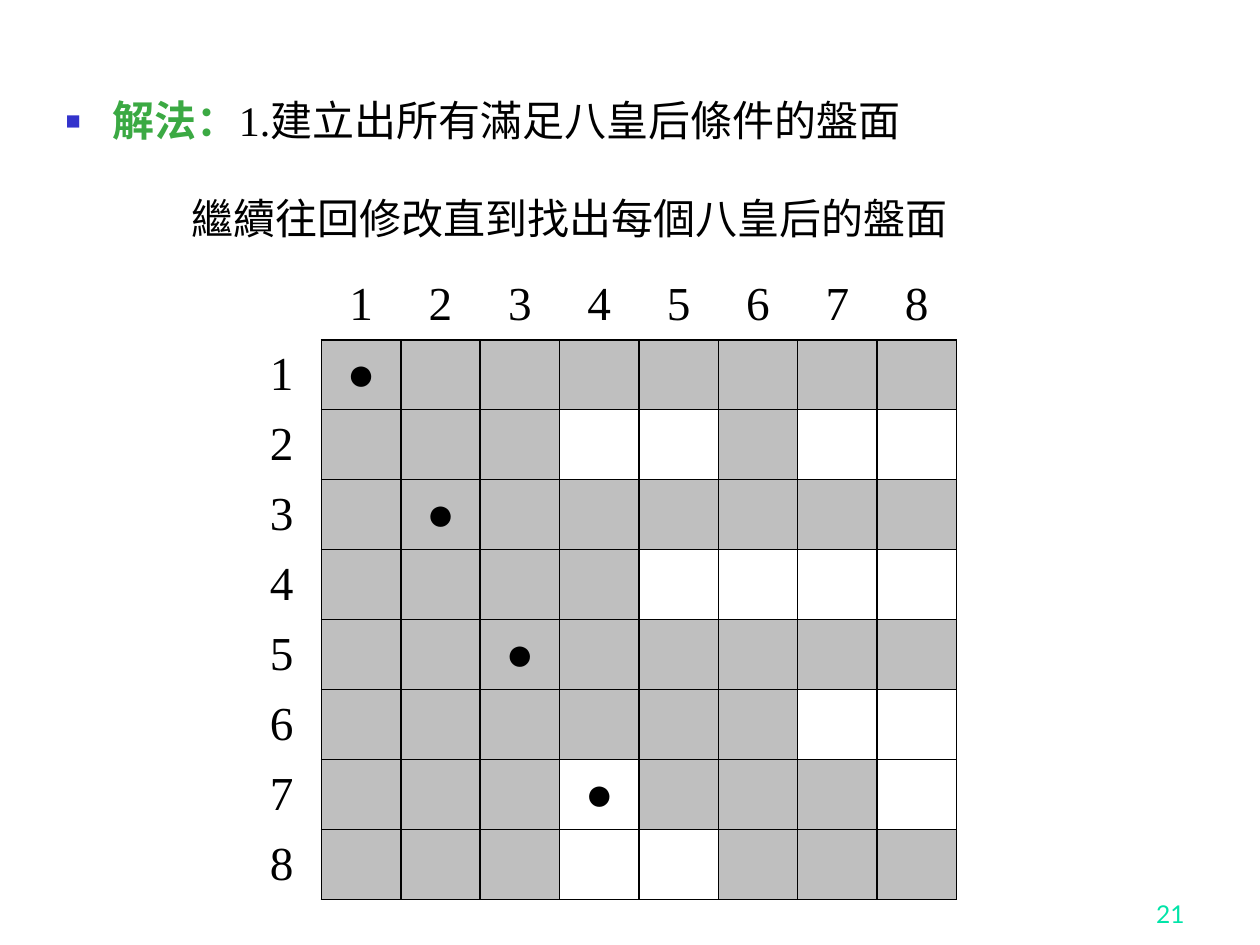
from lxml import etree
from pptx import Presentation
from pptx import util as u
from pptx.dml.color import RGBColor
from pptx.enum import text
from pptx.oxml import ns

# Content: "#" is an attacked square, "." a free one
LEAD = "解法："
STEP = "1.建立出所有滿足八皇后條件的盤面"
NOTE = "繼續往回修改直到找出每個八皇后的盤面"
PAGE = "21"
BOARD = [
    "########",
    "###..#..",
    "########",
    "####....",
    "########",
    "######..",
    "###.###.",
    "###..###",
]
QUEENS = [(1, 1), (3, 2), (5, 3), (7, 4)]  # row, column
SIZE = len(BOARD) + 1
COL, ROW = 1.6, 1.41  # cm
BLACK, WHITE, GREY = "000000", "FFFFFF", "BFBFBF"
SERIF = "Times New Roman"


def color(code):
    return RGBColor.from_string(code)


def box(shape, left, top, width, height):
    shape.left, shape.top = u.Cm(left), u.Cm(top)
    shape.width, shape.height = u.Cm(width), u.Cm(height)


def add_run(para, words, size, code=BLACK, face=SERIF, bold=False):
    run = para.add_run()
    run.text = words
    font = run.font
    font.size, font.name, font.bold = u.Pt(size), face, bold
    font.color.rgb = color(code)


def add_xml(parent, tag, **attrs):
    return etree.SubElement(parent, ns.qn("a:" + tag), attrs)


def indent(para, left, first):
    props = para._p.get_or_add_pPr()
    props.set("marL", str(u.Cm(left)))
    props.set("indent", str(u.Cm(first)))
    return props


def border(cell, sides):
    """Draw the sides marked true and clear the others."""
    props = cell._tc.get_or_add_tcPr()
    for spot, (side, drawn) in enumerate(sides.items()):
        line = etree.Element(ns.qn("a:ln" + side), w=str(u.Pt(1)))
        if drawn:
            add_xml(add_xml(line, "solidFill"), "srgbClr", val=BLACK)
        else:
            add_xml(line, "noFill")
        props.insert(spot, line)


def label(row, col):
    if (row, col) in QUEENS:
        return "●"
    if (row == 0) != (col == 0):
        return str(row + col)
    return ""


def add_body(slide):
    body = slide.placeholders[1]
    box(body, 1.07, 1.9, 22.43, 1.83)
    frame = body.text_frame
    frame.auto_size = text.MSO_AUTO_SIZE.NONE
    frame.vertical_anchor = text.MSO_ANCHOR.TOP

    # Bulleted line
    head = frame.paragraphs[0]
    head.line_spacing, head.space_before = 0.9, u.Pt(4.8)
    props = indent(head, 0.95, -0.95)
    add_xml(add_xml(props, "buClr"), "srgbClr", val="3333CC")
    add_xml(props, "buSzPct", val="60000")
    add_xml(props, "buChar", char="■")
    add_run(head, LEAD, 24, "3BA943", bold=True)
    add_run(head, STEP, 24)

    # Indented line
    note = frame.add_paragraph()
    note.line_spacing, note.space_before = 0.9, u.Pt(30)
    add_xml(indent(note, 2.54, 0), "buNone")
    add_run(note, NOTE, 24)


def add_board(slide):
    frame = slide.shapes.add_table(
        SIZE, SIZE, u.Cm(4.88), u.Cm(5.44), u.Cm(COL * SIZE), u.Cm(ROW * SIZE))
    table = frame.table
    table.first_row = table.horz_banding = False
    for col in table.columns:
        col.width = u.Cm(COL)
    for row in table.rows:
        row.height = u.Cm(ROW)

    for row in range(SIZE):
        for col in range(SIZE):
            cell = table.cell(row, col)
            inner = row > 0 and col > 0
            shade = inner and BOARD[row - 1][col - 1] == "#"
            cell.fill.solid()
            cell.fill.fore_color.rgb = color(GREY if shade else WHITE)
            border(cell, {"L": inner, "R": row > 0, "T": inner, "B": col > 0})
            cell.margin_top = cell.margin_bottom = 0
            cell.vertical_anchor = text.MSO_ANCHOR.MIDDLE
            words = label(row, col)
            if words:
                para = cell.text_frame.paragraphs[0]
                para.alignment = text.PP_ALIGN.CENTER
                add_run(para, words, 27)


def add_page(slide):
    shape = slide.shapes.add_textbox(
        u.Cm(18.85), u.Cm(17.58), u.Cm(5.28), u.Cm(1.27))
    frame = shape.text_frame
    frame.word_wrap = True
    frame.vertical_anchor = text.MSO_ANCHOR.BOTTOM
    para = frame.paragraphs[0]
    para.alignment = text.PP_ALIGN.RIGHT
    add_run(para, PAGE, 14, "00E4A8", "Lato")


def main():
    prs = Presentation()
    prs.slide_width, prs.slide_height = u.Cm(25.4), u.Cm(19.05)
    # Title-and-content layout: this slide has a body but no title
    slide = prs.slides.add_slide(prs.slide_layouts[1])
    title = slide.shapes.title._element
    title.getparent().remove(title)
    add_page(slide)
    add_body(slide)
    add_board(slide)
    prs.save("out.pptx")


if __name__ == "__main__":
    main()
